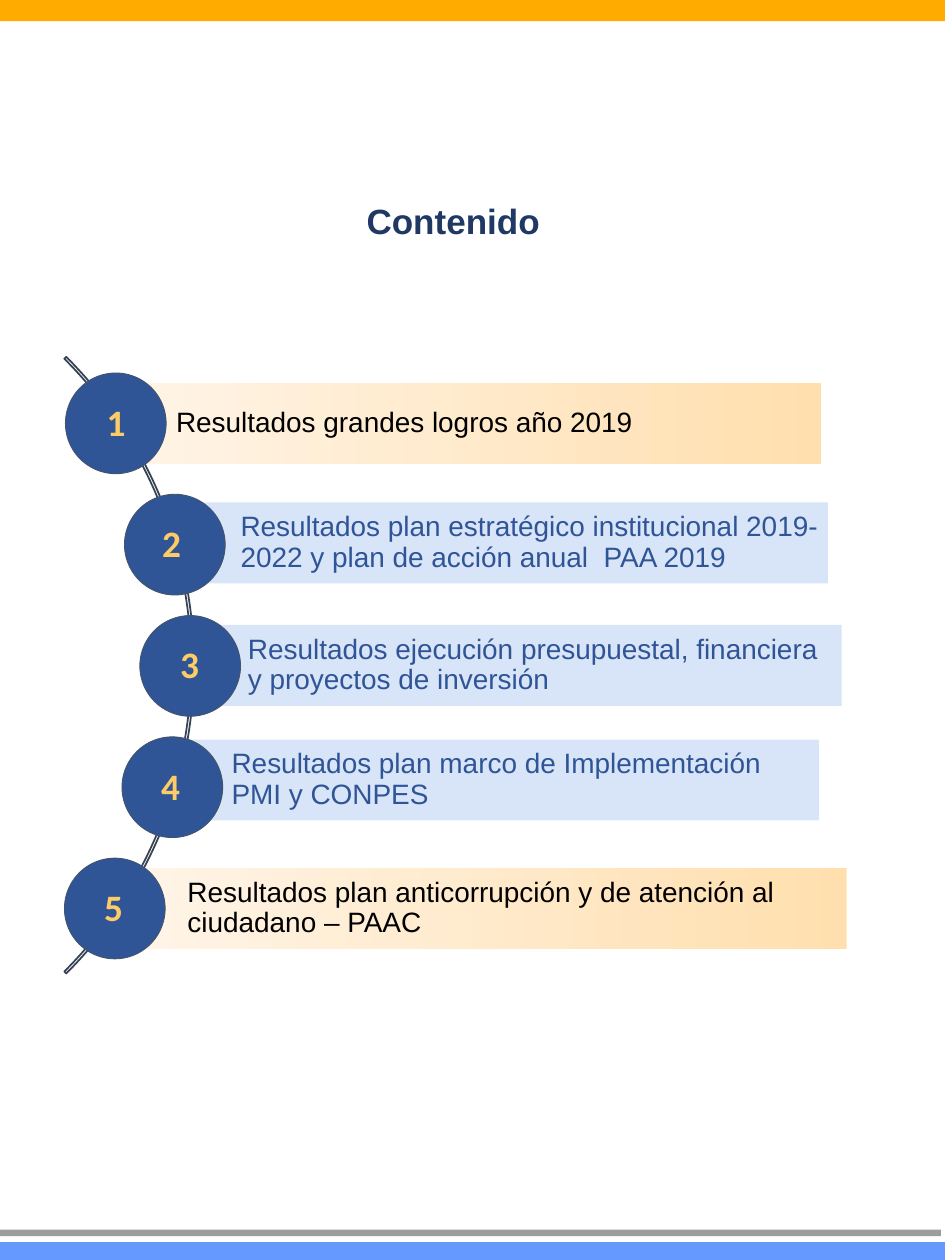
from pptx import Presentation
from pptx import util as u
from pptx.dml import color
from pptx.enum import shapes, text

# Content: bar text, bar tone, bar (left, top, width), circle left, number left; all in cm
HEADING = "Contenido"
TOPICS = [
    ("Resultados grandes logros año 2019", "warm", (2.74, 7.72, 13.82), 1.32, 1.9),
    ("Resultados plan estratégico institucional 2019-2022 y plan de acción anual  PAA 2019",
     "cool", (4.04, 10.13, 12.65), 2.51, 3.02),
    ("Resultados ejecución presupuestal, financiera y proyectos de inversión",
     "cool", (4.19, 12.6, 12.78), 2.82, 3.38),
    ("Resultados plan marco de Implementación PMI y CONPES",
     "cool", (3.86, 14.91, 12.65), 2.46, 3.0),
    ("Resultados plan anticorrupción y de atención al ciudadano – PAAC",
     "warm", (2.97, 17.5, 14.1), 1.3, 1.85),
]
STRIPS = [  # colour, left, top, width, height
    ("FFAB00", 0, 0, 19.1, 0.43),
    ("6699FF", -0.03, 25.04, 19.2, 0.38),
    ("9D9D9C", -0.03, 24.79, 19, 0.13),
]
THEME = {
    "heading": {"name": "Arial", "size": 20, "bold": True, "color": "203864"},
    "warm": {"name": "Arial", "size": 16, "bold": False, "color": "000000"},
    "cool": {"name": "Arial", "size": 16, "bold": False, "color": "2F5597"},
    "number": {"name": "Calibri", "size": 21.3, "bold": True, "color": "FECC66"},
    "warm_fill": ("FFDFAE", "FFF4E6"),
    "cool_fill": "D8E4F7",
    "circle": "2F5597",
    "circle_line": ("44546A", 0.5),
    "arc_line": ("364355", 1),
}
BAR_HEIGHT, CIRCLE = 1.63, 2.03
FIRST_CIRCLE, LAST_CIRCLE = 7.52, 17.3
NUMBER_DROP = 0.4

rgb = color.RGBColor.from_string
deck = Presentation()
deck.slide_width, deck.slide_height = u.Cm(19.05), u.Cm(25.4)
slide = deck.slides.add_slide(deck.slide_layouts[6])


def draw(kind, place, fill=None, line=None):
    figure = slide.shapes.add_shape(kind, *map(u.Cm, place))
    figure.shadow.inherit = False
    if isinstance(fill, tuple):
        figure.fill.gradient()
        figure.fill.gradient_angle = 180
        for stop, tone in zip(figure.fill.gradient_stops, fill):
            stop.color.rgb = rgb(tone)
    elif fill:
        figure.fill.solid()
        figure.fill.fore_color.rgb = rgb(fill)
    else:
        figure.fill.background()
    if line:
        figure.line.color.rgb = rgb(line[0])
        figure.line.width = u.Pt(line[1])
    else:
        figure.line.fill.background()
    return figure


def write(holder, words, style, spacing=None, **frame_format):
    frame = holder.text_frame
    frame_format = {"word_wrap": True, **frame_format}
    for key, value in frame_format.items():
        setattr(frame, key, value)
    line = frame.paragraphs[0]
    line.alignment = text.PP_ALIGN.LEFT
    line.line_spacing = spacing
    run = line.add_run()
    run.text = words
    look = THEME[style]
    for key, value in {"name": look["name"], "size": u.Pt(look["size"]),
                       "bold": look["bold"]}.items():
        setattr(run.font, key, value)
    run.font.color.rgb = rgb(look["color"])


def text_box(*place):
    return slide.shapes.add_textbox(*map(u.Cm, place))


# Page strips and heading
for tone, *place in STRIPS:
    draw(shapes.MSO_SHAPE.RECTANGLE, place, tone)
write(text_box(7.14, 3.99, 6.43, 1.02), HEADING, "heading", 0.9,
      vertical_anchor=text.MSO_ANCHOR.MIDDLE)

# Thin arc behind the circles, from 315 to 45 degrees
arc = draw(shapes.MSO_SHAPE.BLOCK_ARC, (-13.67, 4.62, 17.58, 17.58), line=THEME["arc_line"])
for index, value in enumerate((189, 27, 0.0031)):
    arc.adjustments[index] = value

# Topics: bar, circle and number
step = (LAST_CIRCLE - FIRST_CIRCLE) / (len(TOPICS) - 1)
for index, (topic, tone, bar_place, circle_left, number_left) in enumerate(TOPICS):
    bar = draw(shapes.MSO_SHAPE.RECTANGLE, (*bar_place, BAR_HEIGHT), THEME[tone + "_fill"])
    write(bar, topic, tone, 0.9, vertical_anchor=text.MSO_ANCHOR.MIDDLE,
          margin_left=u.Cm(0.81), margin_right=u.Cm(0.1),
          margin_top=u.Cm(0.1), margin_bottom=u.Cm(0.1))
    circle_top = FIRST_CIRCLE + index * step
    draw(shapes.MSO_SHAPE.OVAL, (circle_left, circle_top, CIRCLE, CIRCLE),
         THEME["circle"], THEME["circle_line"])
    write(text_box(number_left, circle_top + NUMBER_DROP, 1.1, 1.17), str(index + 1), "number")

deck.save("out.pptx")
